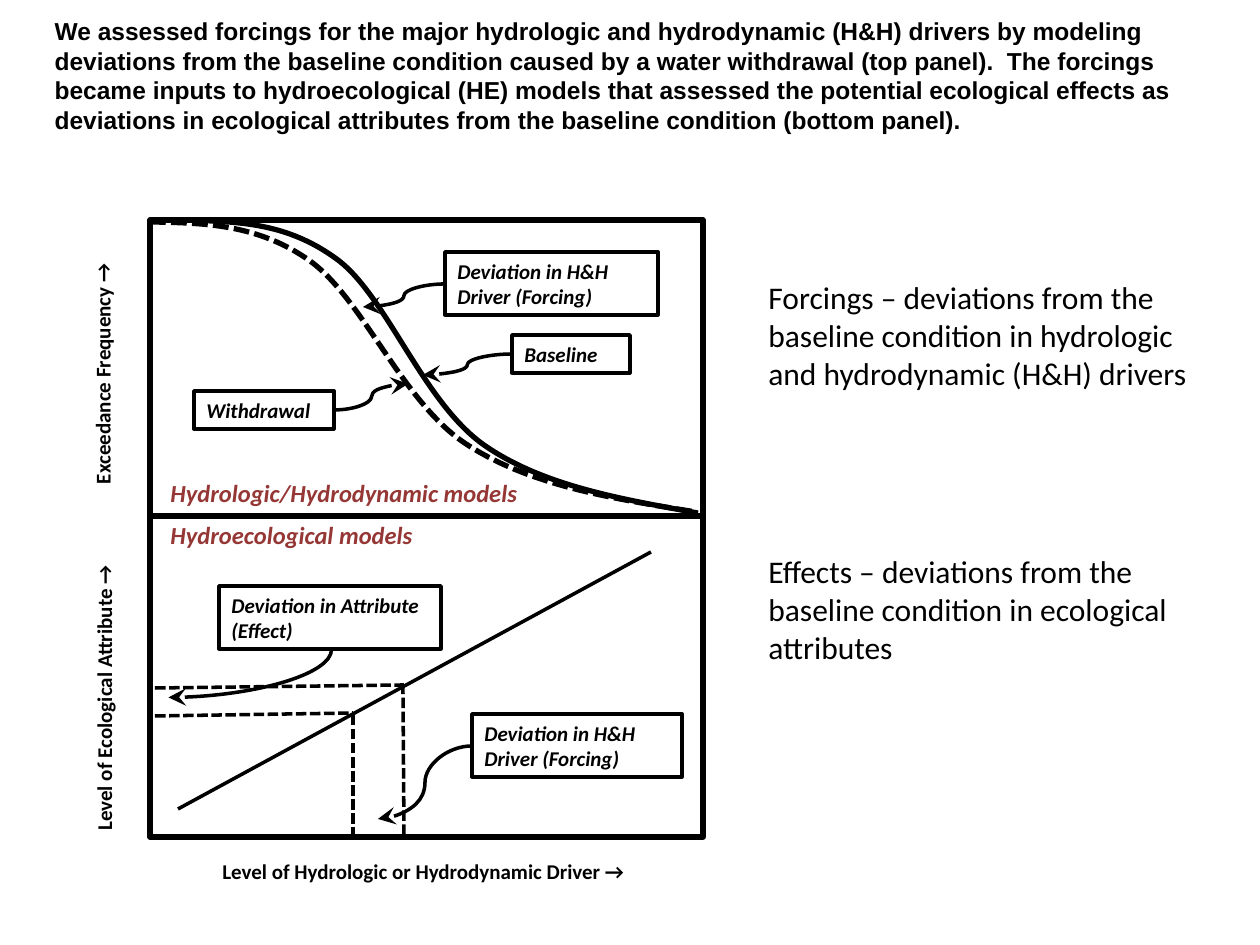
from pptx import Presentation
from pptx.dml.color import RGBColor
from pptx.enum.dml import MSO_LINE
from pptx.enum.shapes import MSO_CONNECTOR, MSO_SHAPE
from pptx.enum.text import MSO_ANCHOR, MSO_AUTO_SIZE, PP_ALIGN
from pptx.oxml.ns import qn
from pptx.util import Emu, Pt
from lxml.etree import SubElement

PX = 914400 / 126
COLORS = {"black": "000000", "red": "953735"}


def write(sp, text, color="black", **fmt):
    tf = sp.text_frame
    tf.word_wrap = True
    tf.auto_size = MSO_AUTO_SIZE.NONE
    tf.vertical_anchor = MSO_ANCHOR.TOP
    p = tf.paragraphs[0]
    p.alignment = PP_ALIGN.LEFT
    r = p.add_run()
    r.text = text
    r.font.color.rgb = RGBColor.from_string(COLORS[color])
    for name, value in fmt.items():
        setattr(r.font, name, value)


def stroke(sp, width, dashed=False):
    sp.line.color.rgb = RGBColor.from_string(COLORS["black"])
    sp.line.width = Pt(width)
    if dashed:
        sp.line.dash_style = MSO_LINE.SQUARE_DOT


prs = Presentation()
prs.slide_width, prs.slide_height = Emu(round(1260 * PX)), Emu(round(945 * PX))
s = prs.slides.add_slide(prs.slide_layouts[5])

title = s.shapes.title
title.left, title.top, title.width, title.height = [Emu(round(v * PX)) for v in (42, 10, 1155, 131)]
write(title, "We assessed forcings for the major hydrologic and hydrodynamic (H&H) drivers by modeling "
      "deviations from the baseline condition caused by a water withdrawal (top panel).  The forcings "
      "became inputs to hydroecological (HE) models that assessed the potential ecological effects as "
      "deviations in ecological attributes from the baseline condition (bottom panel).",
      name="Arial", size=Pt(14), bold=True)

label = {"name": "Calibri", "size": Pt(12), "bold": True}
boxes = [
    (150, 220, 553, 296, 3, ""),
    (150, 516, 553, 321, 3, ""),
    (445, 252, 213, 63, 2, "Deviation in H&H Driver (Forcing)"),
    (512, 335, 118, 38, 2, "Baseline"),
    (194, 391, 140, 38, 2, "Withdrawal"),
    (219, 586, 222, 63, 2, "Deviation in Attribute (Effect)"),
    (472, 714, 210, 63, 2, "Deviation in H&H Driver (Forcing)"),
]
for *box, width, text in boxes:
    sp = s.shapes.add_shape(MSO_SHAPE.RECTANGLE, *[Emu(round(v * PX)) for v in box])
    sp.shadow.inherit = False
    sp.fill.background()
    stroke(sp, width)
    if text:
        write(sp, text, italic=True, **label)

baseline = [(188, 220), (238, 222), (287, 222), (338, 260), (387, 297),
            (423, 402), (484, 445), (543, 486), (621, 499), (698, 513)]
withdrawal = [(150, 222), (204, 223), (258, 224), (310, 261), (363, 299),
              (402, 402), (466, 444), (530, 486), (614, 499), (696, 512)]
for points, dashed in [(baseline, False), (withdrawal, True)]:
    fb = s.shapes.build_freeform(*points[0], scale=PX)
    fb.add_line_segments(points[1:], close=False)
    sp = fb.convert_to_shape()
    sp.shadow.inherit = False
    sp.fill.background()
    stroke(sp, 3, dashed)
    segments = list(sp._element.iter(qn("a:lnTo")))
    for i in range(0, len(segments), 3):
        bezier = SubElement(segments[i].getparent(), qn("a:cubicBezTo"))
        for segment in segments[i:i + 3]:
            bezier.append(segment[0])
            segment.getparent().remove(segment)

lines = [
    (178, 809, 651, 552, False),
    (353, 838, 353, 714, True),
    (404, 835, 403, 688, True),
    (155, 716, 353, 713, True),
    (155, 688, 404, 685, True),
]
for *ends, dashed in lines:
    cxn = s.shapes.add_connector(MSO_CONNECTOR.STRAIGHT, *[Emu(round(v * PX)) for v in ends])
    stroke(cxn, 2, dashed)
    SubElement(cxn._element.spPr, qn("a:effectLst"))

arrows = [
    (445, 284, 363, 307, "curvedConnector3", 0),
    (512, 354, 423, 375, "curvedConnector3", 0),
    (335, 410, 408, 384, "curvedConnector3", 0),
    (472, 746, 378, 819, "curvedConnector3", 0),
    (226, 592, 274, 755, "curvedConnector2", 90),
]
for *ends, preset, angle in arrows:
    cxn = s.shapes.add_connector(MSO_CONNECTOR.CURVE, *[Emu(round(v * PX)) for v in ends])
    stroke(cxn, 2)
    spPr = cxn._element.spPr
    spPr.find(qn("a:prstGeom")).set("prst", preset)
    if angle:
        spPr.find(qn("a:xfrm")).set("rot", str(angle * 60000))
    SubElement(spPr.find(qn("a:ln")), qn("a:tailEnd"), type="stealth", w="lg", len="lg")
    SubElement(spPr, qn("a:effectLst"))

model = {"name": "Calibri", "size": Pt(14), "bold": True, "italic": True, "color": "red"}
note = {"name": "Calibri", "size": Pt(18)}
texts = [
    (-28, 346, 262, 39, 270, "Exceedance Frequency →", label),
    (-64, 656, 336, 38, 270, "Level of Ecological Attribute →", label),
    (210, 852, 441, 38, 0, "Level of Hydrologic or Hydrodynamic Driver →", label),
    (158, 472, 378, 43, 0, "Hydrologic/Hydrodynamic models", model),
    (158, 514, 346, 43, 0, "Hydroecological models", model),
    (756, 272, 472, 127, 0, "Forcings – deviations from the baseline condition in hydrologic "
     "and hydrodynamic (H&H) drivers", note),
    (756, 546, 472, 127, 0, "Effects – deviations from the baseline condition in ecological attributes", note),
]
for *box, angle, text, fmt in texts:
    sp = s.shapes.add_textbox(*[Emu(round(v * PX)) for v in box])
    sp.rotation = angle
    write(sp, text, **fmt)

prs.save("out.pptx")
